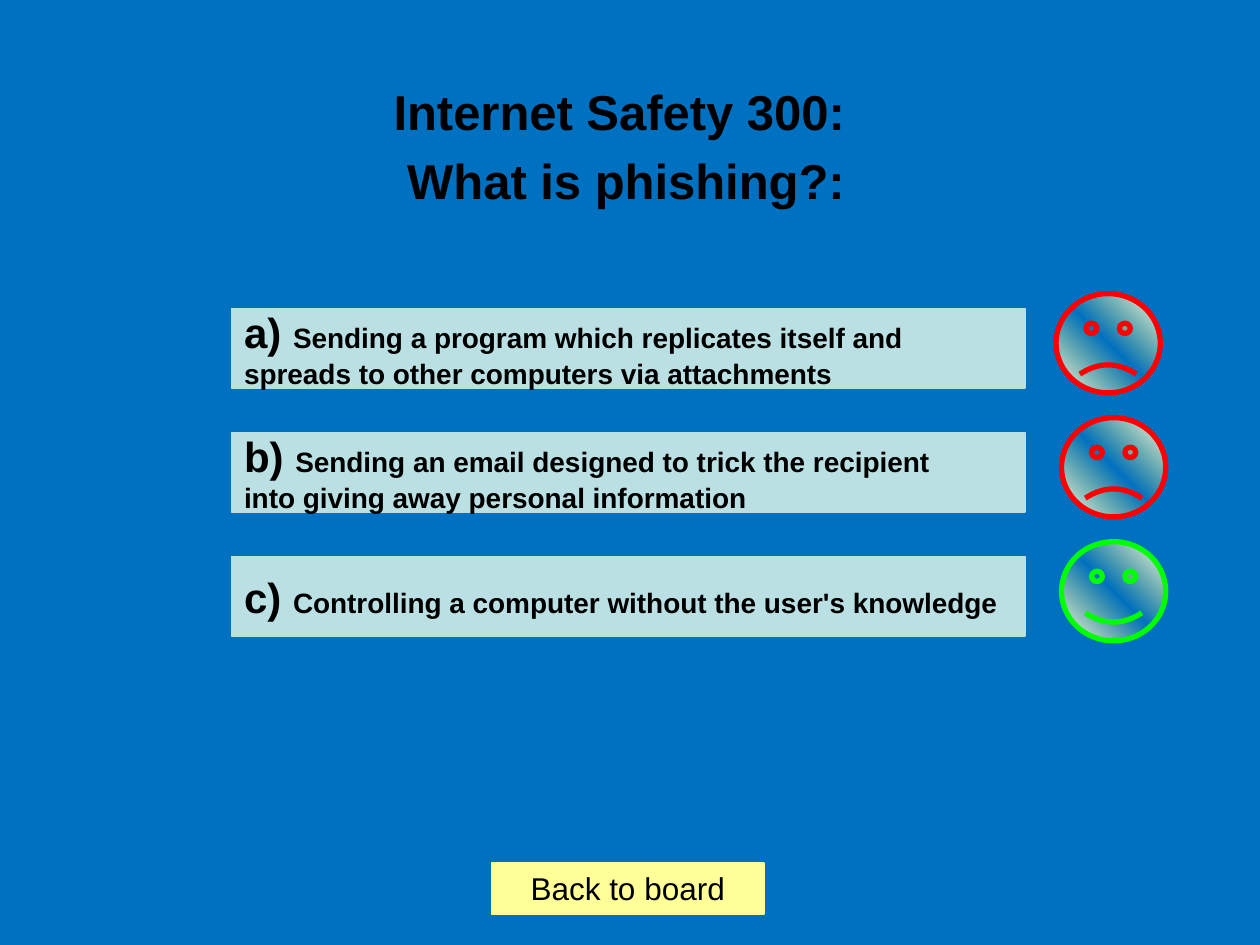
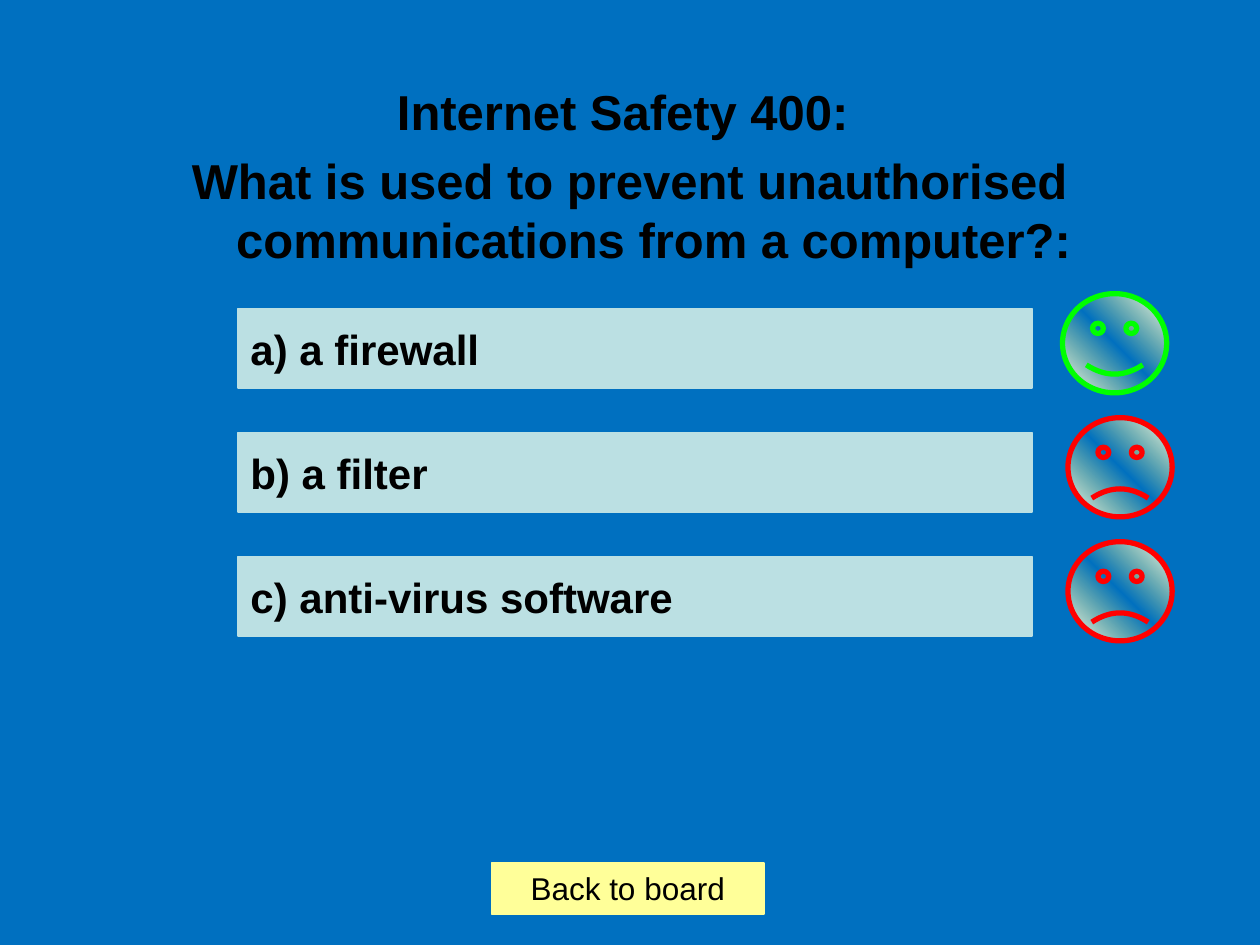
from lxml import etree
from pptx import Presentation
from pptx.dml.color import RGBColor
from pptx.enum.shapes import MSO_SHAPE
from pptx.enum.text import MSO_ANCHOR, MSO_AUTO_SIZE, PP_ALIGN
from pptx.oxml import parse_xml
from pptx.oxml.ns import nsdecls, qn
from pptx.util import Cm, Pt

BUTTON, SMILEY = MSO_SHAPE.ACTION_BUTTON_CUSTOM, MSO_SHAPE.SMILEY_FACE
LEFT, CENTER = PP_ALIGN.LEFT, PP_ALIGN.CENTER
TOP, MIDDLE = MSO_ANCHOR.TOP, MSO_ANCHOR.MIDDLE
FONT = "Arial"
COLORS = {
    "background": "0070C0", "text": "000000", "answer": "BBE0E3",
    "back": "FFFF99", "right": "00FF00", "wrong": "FF0000",
    "face_edge": "FFFFFF", "face_middle": "FFFF66",
}
ROW_PITCH = 2.5
BAR_W, BAR_H = 16, 1.6
FACE_W, FACE_H = 2.1, 2.0
TITLE_ONLY = 5

# Each answer holds (label, first line, further lines); sizes follow the label.
QUESTIONS = [
    {"title": ["Internet Safety 300: ", "What is phishing?:"],
     "title_box": (1.19, 1.52, 22.86, 3), "indent": 1.83,
     "answers_at": (4.67, 6.22), "size": 16, "correct": 2,
     "answers": [
         ["a) ", "Sending a program which replicates itself and",
          "spreads to other computers via attachments"],
         ["b) ", "Sending an email designed to trick the recipient",
          "into giving away personal information"],
         ["c) ", "Controlling a computer without the user's knowledge"]]},
    {"title": ["Internet Safety 400: ",
               "What is used to prevent unauthorised communications from a computer?:"],
     "title_box": (0.69, 1.52, 24, 2), "indent": 0.97,
     "answers_at": (4.8, 6.22), "size": 24, "correct": 0,
     "answers": [["a) ", "a firewall"], ["b) ", "a filter"],
                 ["c) ", "anti-virus software"]]},
]


def rgb(name):
    return RGBColor.from_string(COLORS[name])


def style_paragraph(p, size, bold=True, align=LEFT):
    p.alignment = align
    p.font.name, p.font.size, p.font.bold = FONT, Pt(size), bold
    p.font.color.rgb = rgb("text")


def add_button(s, box, color):
    """Add a flat button and return its empty text frame."""
    sp = s.shapes.add_shape(BUTTON, *map(Cm, box))
    sp.shadow.inherit = False
    sp.fill.solid()
    sp.fill.fore_color.rgb = rgb(color)
    sp.line.color.rgb = rgb(color)
    sp.line.width = Pt(1)
    tf = sp.text_frame
    tf.word_wrap = False
    tf.vertical_anchor = MIDDLE
    return tf


def add_title(s, box, lines, indent):
    sp = s.shapes.title
    sp.left, sp.top, sp.width, sp.height = map(Cm, box)
    tf = sp.text_frame
    tf.word_wrap, tf.auto_size = True, MSO_AUTO_SIZE.NONE
    tf.vertical_anchor = TOP
    tf.text = "\n".join(lines)
    for p in tf.paragraphs:
        style_paragraph(p, 28, align=CENTER)
        p.space_before = Pt(5.6)
        pPr = p._p.get_or_add_pPr()
        pPr.set("marL", str(Cm(indent)))
        pPr.set("indent", str(-Cm(indent)))


def add_answer(s, box, answer, size):
    label, first, *others = answer
    tf = add_button(s, box, "answer")
    p = tf.paragraphs[0]
    style_paragraph(p, size)
    for text, pt in ((label, 24), (first, size)):
        r = p.add_run()
        r.text = text
        r.font.size = Pt(pt)
    for text in others:
        p = tf.add_paragraph()
        p.text = text
        style_paragraph(p, size)


def fill_face(sp):
    """Fade diagonally from solid edges to a clear middle."""
    fill = parse_xml(
        f'<a:gradFill {nsdecls("a")} rotWithShape="1"><a:gsLst/>'
        '<a:lin ang="18900000" scaled="1"/></a:gradFill>')
    for pos, name in ((0, "face_edge"), (50, "face_middle"), (100, "face_edge")):
        gs = etree.SubElement(fill[0], qn("a:gs"), pos=str(pos * 1000))
        color = etree.SubElement(gs, qn("a:srgbClr"), val=COLORS[name])
        if name == "face_middle":
            etree.SubElement(color, qn("a:alpha"), val="0")
    sp._element.spPr.find(qn("a:prstGeom")).addnext(fill)


def add_face(s, box, correct):
    sp = s.shapes.add_shape(SMILEY, *map(Cm, box))
    sp.shadow.inherit = False
    sp.adjustments[0] = 0.047 if correct else -0.047
    fill_face(sp)
    sp.line.color.rgb = rgb("right" if correct else "wrong")
    sp.line.width = Pt(3)


def add_answers(s, origin, question):
    left, top = origin
    for i, answer in enumerate(question["answers"]):
        y = top + i * ROW_PITCH
        add_answer(s, (left, y, BAR_W, BAR_H), answer, question["size"])
        face_x = left + (16.73 if i else 16.62)
        add_face(s, (face_x, y - 0.3, FACE_W, FACE_H), i == question["correct"])


def add_back_button(s, box):
    p = add_button(s, box, "back").paragraphs[0]
    p.text = "Back to board"
    style_paragraph(p, 18, bold=False, align=CENTER)


def add_question(prs, question):
    s = prs.slides.add_slide(prs.slide_layouts[TITLE_ONLY])
    add_title(s, question["title_box"], question["title"], question["indent"])
    add_answers(s, question["answers_at"], question)
    add_back_button(s, (9.91, 17.4, 5.49, 1.02))


def main():
    prs = Presentation()
    prs.slide_width, prs.slide_height = Cm(25.4), Cm(19.05)
    fill = prs.slide_master.background.fill
    fill.solid()
    fill.fore_color.rgb = rgb("background")
    for question in QUESTIONS:
        add_question(prs, question)
    prs.save("out.pptx")


if __name__ == "__main__":
    main()
